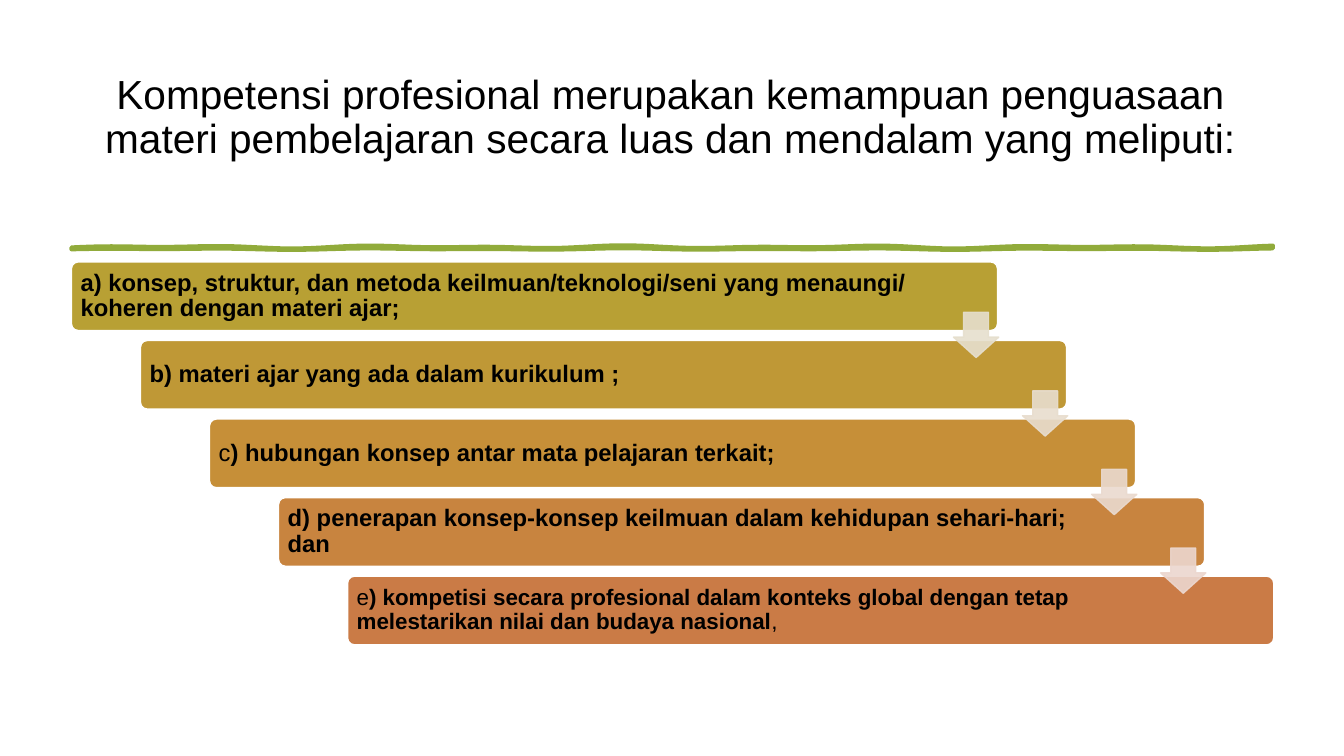
import math

import lxml.etree
import pptx
import pptx.dml.color
import pptx.enum.shapes
import pptx.enum.text
import pptx.oxml.ns
import pptx.util

Cm = pptx.util.Cm
Pt = pptx.util.Pt
RGBColor = pptx.dml.color.RGBColor
MSO_SHAPE = pptx.enum.shapes.MSO_SHAPE
MSO_ANCHOR = pptx.enum.text.MSO_ANCHOR

FONT = "Arial"
BLACK = RGBColor(0x00, 0x00, 0x00)
WHITE = RGBColor(0xFF, 0xFF, 0xFF)
GREEN = RGBColor(0x91, 0xAB, 0x3B)
STEP_COLORS = [
    RGBColor(0xB8, 0xA0, 0x34),
    RGBColor(0xBF, 0x98, 0x36),
    RGBColor(0xC6, 0x8F, 0x38),
    RGBColor(0xC8, 0x84, 0x3F),
    RGBColor(0xCA, 0x7B, 0x46),
]
ARROW_COLORS = [
    RGBColor(0xE6, 0xDF, 0xCE),
    RGBColor(0xE8, 0xDD, 0xCE),
    RGBColor(0xEA, 0xDA, 0xCF),
    RGBColor(0xEC, 0xD7, 0xCF),
]

TITLE = ("Kompetensi profesional merupakan kemampuan penguasaan materi "
         "pembelajaran secara luas dan mendalam yang meliputi:")
# Each step: runs as (text, bold), font size and text width in cm
STEPS = [
    ([("a) konsep, struktur, dan metoda keilmuan/teknologi/seni yang menaungi/ "
       "koheren dengan materi ajar;", True)], 17, 21.26),
    ([("b) materi ajar yang ada dalam kurikulum ;", True)], 17, 20.37),
    ([("c", False), (") hubungan konsep antar mata pelajaran terkait;", True)],
     17, 20.37),
    ([("d) penerapan konsep-konsep keilmuan dalam kehidupan sehari-hari; dan",
       True)], 17, 20.37),
    ([("e", False),
      (") kompetisi secara profesional dalam konteks global dengan tetap "
       "melestarikan nilai dan budaya nasional", True),
      (",", False)], 16, 20.37),
]

# Staircase geometry in cm
FIRST_LEFT, FIRST_TOP = 1.8, 6.6
STEP_RIGHT, STEP_DOWN = 1.74, 1.98
CARD_WIDTH, CARD_HEIGHT = 23.34, 1.73
ARROW_RIGHT, ARROW_DOWN, ARROW_SIZE = 22.23, 1.27, 1.14


def step_position(index):
    return FIRST_LEFT + index * STEP_RIGHT, FIRST_TOP + index * STEP_DOWN


def format_run(run, size, bold=False):
    run.font.name = FONT
    run.font.size = Pt(size)
    run.font.bold = bold
    run.font.color.rgb = BLACK


def paint(shape, fill, line, width):
    shape.shadow.inherit = False
    shape.fill.solid()
    shape.fill.fore_color.rgb = fill
    shape.line.color.rgb = line
    shape.line.width = Pt(width)


def set_opacity(shape, percent):
    for color in shape._element.spPr.iter(pptx.oxml.ns.qn("a:srgbClr")):
        alpha = lxml.etree.SubElement(color, pptx.oxml.ns.qn("a:alpha"))
        alpha.set("val", str(percent * 1000))


def add_title(slide):
    title = slide.shapes.title
    title.left, title.top = Cm(1.75), Cm(1.75)
    title.width, title.height = Cm(30.33), Cm(3.66)
    text_frame = title.text_frame
    text_frame.text = TITLE
    text_frame.word_wrap = True
    text_frame.auto_size = pptx.enum.text.MSO_AUTO_SIZE.NONE
    text_frame.vertical_anchor = MSO_ANCHOR.MIDDLE
    text_frame.margin_bottom = Cm(1.34)
    paragraph = text_frame.paragraphs[0]
    paragraph.alignment = pptx.enum.text.PP_ALIGN.CENTER
    paragraph.line_spacing = 0.9
    format_run(paragraph.runs[0], 29)


def add_brush_line(slide):
    left, right, middle, half, count = 1.8, 32.08, 6.25, 0.03, 120
    upper, lower = [], []
    for index in range(count + 1):
        x = left + (right - left) * index / count
        wave = 0.02 * math.sin(1.9 * x) + 0.02 * math.sin(1.1 * x)
        upper.append((Cm(x), Cm(middle - half + wave)))
        lower.append((Cm(x), Cm(middle + half + wave / 2)))
    outline = upper + lower[::-1]
    builder = slide.shapes.build_freeform(*outline[0])
    builder.add_line_segments(outline[1:], close=True)
    paint(builder.convert_to_shape(), GREEN, GREEN, 2.75)


def add_card(group, index, color):
    left, top = step_position(index)
    card = group.shapes.add_shape(MSO_SHAPE.ROUNDED_RECTANGLE, Cm(left), Cm(top),
                                  Cm(CARD_WIDTH), Cm(CARD_HEIGHT))
    card.adjustments[0] = 0.1
    paint(card, color, WHITE, 1)


def add_card_text(group, index, runs, size, width):
    left, top = step_position(index)
    box = group.shapes.add_textbox(Cm(left + 0.05), Cm(top + 0.05),
                                   Cm(width), Cm(CARD_HEIGHT - 0.1))
    text_frame = box.text_frame
    text_frame.word_wrap = True
    text_frame.vertical_anchor = MSO_ANCHOR.MIDDLE
    text_frame.margin_left = text_frame.margin_right = Cm(0.18)
    text_frame.margin_top = text_frame.margin_bottom = Cm(0.18)
    paragraph = text_frame.paragraphs[0]
    paragraph.line_spacing = 0.9
    for text, bold in runs:
        run = paragraph.add_run()
        run.text = text
        format_run(run, size, bold)


def add_arrow(group, index, color):
    left, top = step_position(index)
    arrow = group.shapes.add_shape(MSO_SHAPE.DOWN_ARROW, Cm(left + ARROW_RIGHT),
                                   Cm(top + ARROW_DOWN), Cm(ARROW_SIZE),
                                   Cm(ARROW_SIZE))
    arrow.adjustments[0] = 0.55
    arrow.adjustments[1] = 0.45
    paint(arrow, color, color, 1)
    set_opacity(arrow, 90)


def main():
    presentation = pptx.Presentation()
    presentation.slide_width = Cm(33.87)
    presentation.slide_height = Cm(19.05)
    slide = presentation.slides.add_slide(presentation.slide_layouts[5])
    slide.background.fill.solid()
    slide.background.fill.fore_color.rgb = WHITE

    # Heading
    add_title(slide)
    add_brush_line(slide)

    # Staircase of competences
    group = slide.shapes.add_group_shape()
    for index, (color, step) in enumerate(zip(STEP_COLORS, STEPS)):
        add_card(group, index, color)
        add_card_text(group, index, *step)
    for index, color in enumerate(ARROW_COLORS):
        add_arrow(group, index, color)

    presentation.save("out.pptx")


if __name__ == "__main__":
    main()
